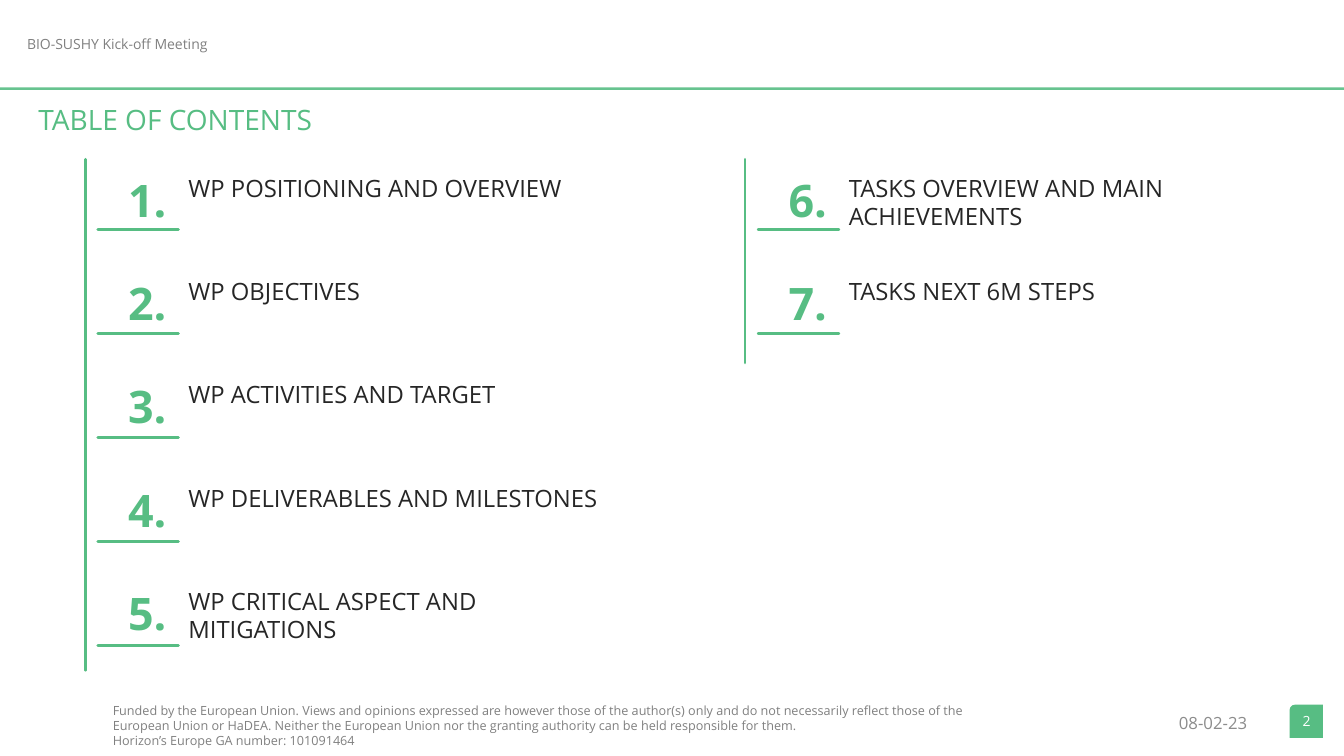
from lxml import etree
from pptx import Presentation
from pptx.dml.color import RGBColor
from pptx.enum.shapes import MSO_CONNECTOR, MSO_SHAPE
from pptx.enum.text import MSO_ANCHOR, MSO_AUTO_SIZE, PP_ALIGN
from pptx.oxml.ns import qn
from pptx.util import Inches, Pt

LEFT, CENTER, RIGHT = PP_ALIGN.LEFT, PP_ALIGN.CENTER, PP_ALIGN.RIGHT
TOP, MIDDLE = MSO_ANCHOR.TOP, MSO_ANCHOR.MIDDLE
STRAIGHT = MSO_CONNECTOR.STRAIGHT
FONT = "Open Sans"
COLORS = {"green": "57BD83", "dark": "262626", "gray": "808080",
          "date": "8C8C8C", "white": "FFFFFF"}
SLIDE_WIDTH, SLIDE_HEIGHT = 13.33, 7.5
TEXT_PITCH, RULE_PITCH = 1.025, 1.03

presentation = Presentation()
presentation.slide_width = Inches(SLIDE_WIDTH)
presentation.slide_height = Inches(SLIDE_HEIGHT)
slide = presentation.slides.add_slide(presentation.slide_layouts[5])


def write(box, text, size, color, align=LEFT, anchor=TOP, bold=False):
    """Fill a text box or placeholder and format all of its runs."""
    frame = box.text_frame
    frame.text = text
    frame.word_wrap = True
    frame.auto_size = MSO_AUTO_SIZE.NONE
    frame.vertical_anchor = anchor
    for paragraph in frame.paragraphs:
        paragraph.alignment = align
        for run in paragraph.runs:
            run.font.name = FONT
            run.font.size = Pt(size)
            run.font.bold = bold
            run.font.color.rgb = RGBColor.from_string(COLORS[color])


def add_rule(x1, y1, x2, y2, width=2, cap="rnd"):
    """Draw a green line without a shadow."""
    line = slide.shapes.add_connector(
        STRAIGHT, Inches(x1), Inches(y1), Inches(x2), Inches(y2))
    line.line.color.rgb = RGBColor.from_string(COLORS["green"])
    line.line.width = Pt(width)
    line.line._get_or_add_ln().set("cap", cap)
    etree.SubElement(line._element.spPr, qn("a:effectLst"))
    return line


# Header, footer and page number
header_rule = add_rule(0, 0.88, SLIDE_WIDTH, 0.88, 1.75, "flat")
header_color = header_rule._element.spPr.find(".//" + qn("a:srgbClr"))
etree.SubElement(header_color, qn("a:alpha")).set("val", "89000")

page_tab = slide.shapes.add_shape(
    MSO_SHAPE.ROUND_1_RECTANGLE, Inches(12.79), Inches(6.99), Inches(0.33), Inches(0.33))
page_tab.rotation = 270
page_tab.shadow.inherit = False
page_tab.fill.solid()
page_tab.fill.fore_color.rgb = RGBColor.from_string(COLORS["green"])
page_tab.line.fill.background()

disclaimer = (
    "Funded by the European Union. Views and opinions expressed are however those of "
    "the author(s) only and do not necessarily reflect those of the European Union or "
    "HaDEA. Neither the European Union nor the granting authority can be held "
    "responsible for them.\nHorizon’s Europe GA number: 101091464")
frame_texts = [
    (0.17, 0.3, 3.64, 0.27, "BIO-SUSHY Kick-off Meeting", 10, "gray", LEFT, TOP),
    (9.52, 7.02, 2.95, 0.3, "08-02-23", 12, "date", RIGHT, MIDDLE),
    (1.02, 6.92, 8.95, 0.56, disclaimer, 9, "gray", LEFT, TOP),
    (12.79, 7.02, 0.34, 0.27, "2", 10, "white", CENTER, TOP),
]
for left, top, width, height, *style in frame_texts:
    box = slide.shapes.add_textbox(Inches(left), Inches(top), Inches(width), Inches(height))
    write(box, *style)

# Title
title = slide.shapes.title
title.left, title.top = Inches(0.28), Inches(0.97)
title.width, title.height = Inches(5.17), Inches(0.44)
write(title, "TABLE OF CONTENTS", 20, "green")

# Contents: left edge of the topics, x and bottom of the side rule, first number, topics
columns = [
    (1.77, 0.85, 6.65, 1, [
        "WP POSITIONING AND OVERVIEW",
        "WP OBJECTIVES",
        "WP ACTIVITIES AND TARGET",
        "WP DELIVERABLES AND MILESTONES",
        "WP CRITICAL ASPECT AND MITIGATIONS"]),
    (8.32, 7.39, 3.6, 6, [
        "TASKS OVERVIEW AND MAIN ACHIEVEMENTS",
        "TASKS NEXT 6M STEPS"]),
]
for topic_left, side_x, side_bottom, first_number, topics in columns:
    add_rule(side_x, side_bottom, side_x, 1.58)
    for row, topic in enumerate(topics):
        top = 1.66 + row * TEXT_PITCH
        number_box = slide.shapes.add_textbox(
            Inches(topic_left - 1), Inches(top), Inches(0.98), Inches(0.64))
        write(number_box, f"{first_number + row}.", 32, "green", RIGHT, bold=True)
        topic_box = slide.shapes.add_textbox(
            Inches(topic_left), Inches(top + 0.01), Inches(4.46), Inches(0.67))
        write(topic_box, topic, 17, "dark")
        rule_y = 2.28 + row * RULE_PITCH
        add_rule(topic_left - 0.8, rule_y, topic_left, rule_y)

presentation.save("out.pptx")
